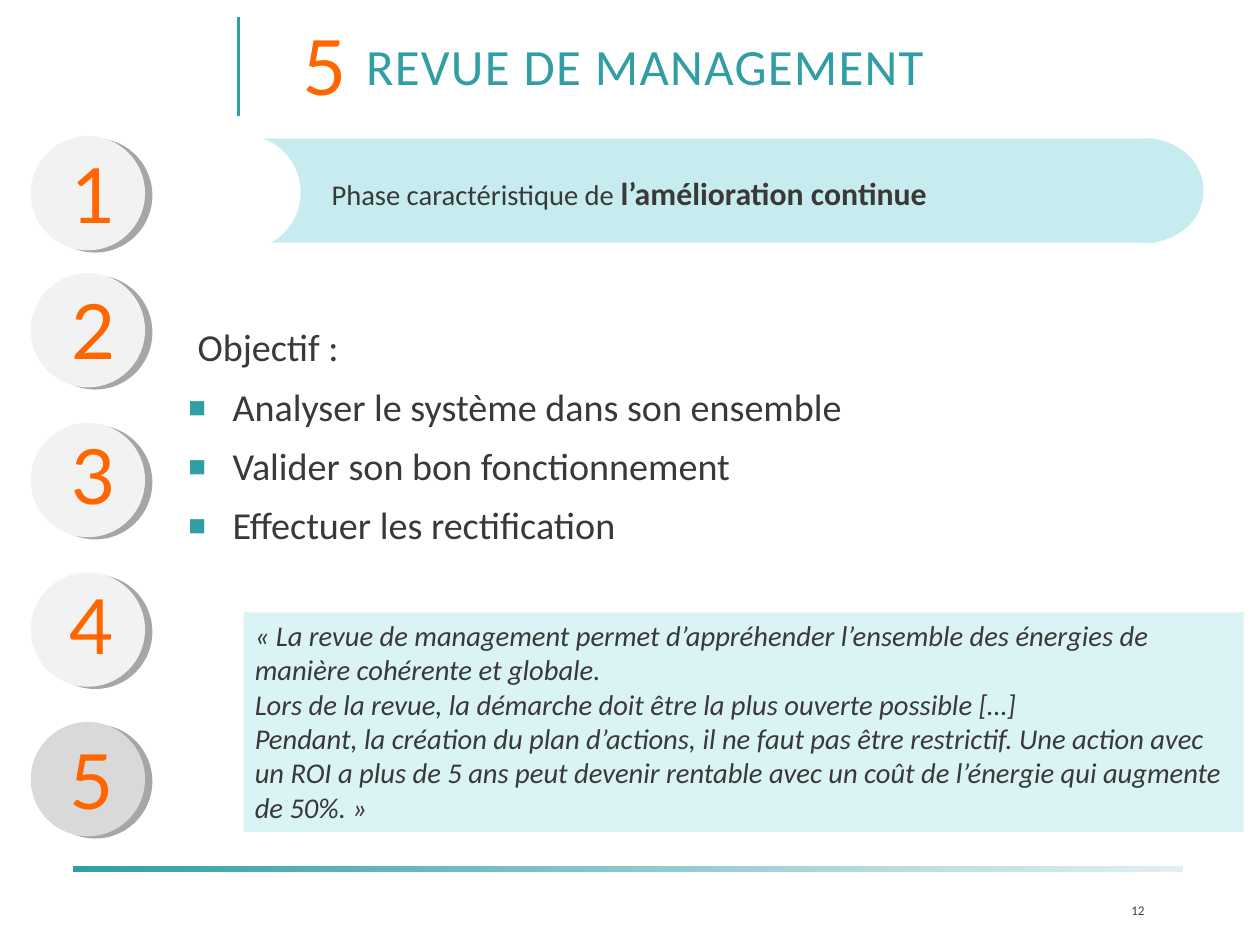
from copy import deepcopy

from pptx import Presentation
from pptx import util as u
from pptx.dml import color
from pptx.enum import shapes, text
from pptx.oxml import ns, xmlchemy

TEAL, ORANGE, DARK = "309EA4", "FF6600", "3A3838"
BAND, QUOTE_FILL, SHADE, WHITE = "C7ECEF", "DAF3F4", "A6A6A6", "FFFFFF"
TITLE = "REVUE DE MANAGEMENT"
CURRENT = "5"
PAGE = "12"
BADGES = [
    ("1", 85.7, 37.8, 89, "F2F2F2"),
    ("2", 172, 37.8, 175, "F2F2F2"),
    ("3", 266.4, 37.8, 266, "F2F2F2"),
    ("4", 360.6, 36.6, 360.6, "F2F2F2"),
    ("5", 454.8, 36.9, 458.3, "D9D9D9"),
]
PHASE = [
    ("Phase caractéristique de ", dict(size=18)),
    ("l’amélioration continue", dict(size=20, bold=True)),
]
GOAL = "Objectif :"
AIMS = [
    "Analyser le système dans son ensemble",
    "Valider son bon fonctionnement",
    "Effectuer les rectification",
]
QUOTE = [
    "«\u00a0La revue de management permet d’appréhender l’ensemble des énergies de "
    "manière cohérente et globale.",
    "Lors de la revue, la démarche doit être la plus ouverte possible […]",
    "Pendant, la création du plan d’actions, il ne faut pas être restrictif. Une action "
    "avec un ROI a plus de 5 ans peut devenir rentable avec un coût de l’énergie qui "
    "augmente de 50%.\u00a0»",
]
FOOT_STOPS = [(0, TEAL), (0.79, "C0E0E3"), (1, "E1EFF1")]


def rgb(value):
    return color.RGBColor.from_string(value)


def write(p, content, size=18, font="Calibri", fill=DARK, bold=False, italic=False):
    p.alignment = text.PP_ALIGN.LEFT
    r = p.add_run()
    r.text = content
    f = r.font
    f.size, f.name, f.bold, f.italic = u.Pt(size), font, bold, italic
    f.color.rgb = rgb(fill)
    return r


def place(sp, *box):
    sp.left, sp.top, sp.width, sp.height = map(u.Pt, box)


def shape(kind, fill, *box):
    sp = s.shapes.add_shape(kind, *map(u.Pt, box))
    sp.shadow.inherit = False
    sp.fill.solid()
    sp.fill.fore_color.rgb = rgb(fill)
    sp.line.fill.background()
    return sp


def textbox(*box):
    tf = s.shapes.add_textbox(*map(u.Pt, box)).text_frame
    tf.word_wrap = True
    return tf


def add_xml(parent, tag, **attrs):
    el = xmlchemy.OxmlElement(tag)
    for key, value in attrs.items():
        el.set(key, value)
    parent.append(el)
    return el


def list_item(p, content, indent, bullet=None):
    p.line_spacing = 0.9
    p.space_after = u.Pt(1.6)
    p.space_before = u.Pt(9.9 if bullet else 0)
    pPr = p._p.get_or_add_pPr()
    pPr.set("marL", str(u.Pt(indent)))
    pPr.set("indent", str(-u.Pt(indent) if bullet else 0))
    if bullet:
        add_xml(add_xml(pPr, "a:buClr"), "a:srgbClr", val=TEAL)
        add_xml(pPr, "a:buSzPct", val="150000")
        add_xml(pPr, "a:buFont", typeface="Arial")
        add_xml(pPr, "a:buChar", char=bullet)
    else:
        add_xml(pPr, "a:buNone")
    write(p, content, size=24)


prs = Presentation()
prs.slide_width, prs.slide_height = u.Pt(793.75), u.Pt(595.25)
s = prs.slides.add_slide(prs.slide_layouts[1])
OVAL = shapes.MSO_SHAPE.OVAL
RECT = shapes.MSO_SHAPE.RECTANGLE

foot = shape(RECT, TEAL, 46.1, 545.6, 699, 3.4)
foot.fill.gradient()
foot.fill.gradient_angle = 0
stops = foot._element.find(".//" + ns.qn("a:gsLst"))
stops.insert(1, deepcopy(stops[0]))
for stop, (position, value) in zip(foot.fill.gradient_stops, FOOT_STOPS):
    stop.position = position
    stop.color.rgb = rgb(value)

rule = s.shapes.add_connector(
    shapes.MSO_CONNECTOR.STRAIGHT, *map(u.Pt, (150.3, 10.8, 150.3, 73.2)))
rule.line.color.rgb = rgb(TEAL)
rule.line.width = u.Pt(2.25)
add_xml(rule._element.spPr, "a:effectLst")

title, body = s.shapes.title, s.placeholders[1]
place(title, 163.4, 26.6, 584, 36)
tf = title.text_frame
tf.auto_size = text.MSO_AUTO_SIZE.NONE
tf.vertical_anchor = text.MSO_ANCHOR.MIDDLE
tf.margin_left = u.Pt(67.2)
tf.paragraphs[0].line_spacing = 0.8
r = write(tf.paragraphs[0], TITLE, size=32, fill=TEAL)
r._r.get_or_add_rPr().set("spc", "80")

place(body, 114.3, 203.5, 633.6, 162.7)
tf = body.text_frame
tf.auto_size = text.MSO_AUTO_SIZE.NONE
tf.margin_left = tf.margin_top = tf.margin_right = tf.margin_bottom = u.Pt(3.6)
list_item(tf.paragraphs[0], GOAL, 6.6)
for aim in AIMS:
    list_item(tf.add_paragraph(), aim, 28.6, "▪")

tf = textbox(705.6, 561.3, 63.4, 23.8)
tf.vertical_anchor = text.MSO_ANCHOR.MIDDLE
write(tf.paragraphs[0], PAGE, size=8.3, fill="444242")

digits = [(CURRENT, 183.6, 8.6)]
for digit, top, digit_left, digit_top, fill in BADGES:
    shape(OVAL, SHADE, 24, top + 1.4, 72, 72)
    shape(OVAL, fill, 19.4, top, 72, 72)
    digits.append((digit, digit_left, digit_top))
for digit, left, top in digits:
    tf = textbox(left, top, 83.5, 65.5)
    write(tf.paragraphs[0], digit, size=48, font="Lato", fill=ORANGE)

shape(shapes.MSO_SHAPE.FLOWCHART_ALTERNATE_PROCESS, BAND, 152.6, 87.3, 584.6, 65.5)
shape(OVAL, WHITE, 117.4, 85.2, 72, 72)
shape(OVAL, BAND, 686.2, 87.3, 72, 65.5)
tf = textbox(201.8, 105.8, 522.7, 31.7)
for content, style in PHASE:
    write(tf.paragraphs[0], content, **style)

quote = shape(RECT, QUOTE_FILL, 153.4, 385.8, 630, 138.2)
tf = quote.text_frame
tf.word_wrap = True
tf.vertical_anchor = text.MSO_ANCHOR.TOP
for i, content in enumerate(QUOTE):
    write(tf.add_paragraph() if i else tf.paragraphs[0], content, italic=True)

prs.save("out.pptx")
